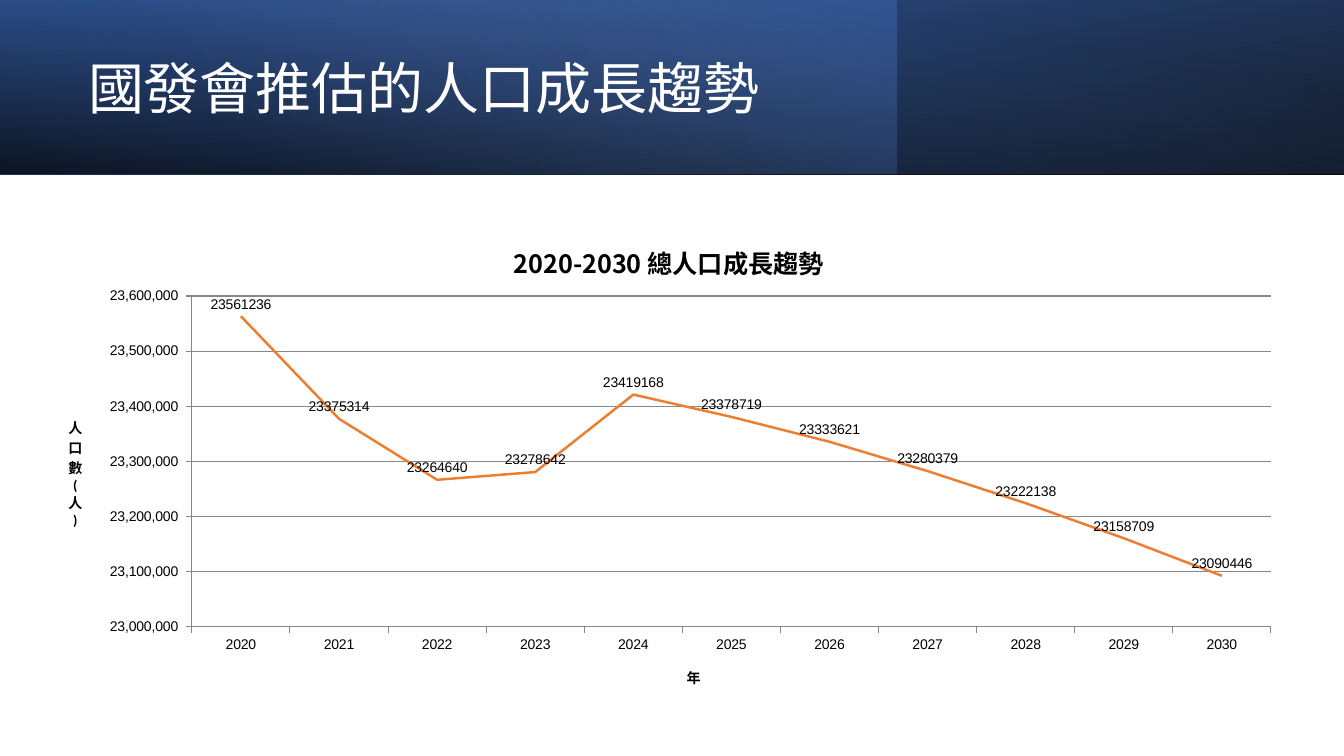
from dataclasses import dataclass

from lxml.etree import SubElement
from pptx import Presentation
from pptx.chart.data import CategoryChartData
from pptx.dml.color import RGBColor
from pptx.enum.chart import XL_CHART_TYPE, XL_LABEL_POSITION, XL_MARKER_STYLE, XL_TICK_MARK
from pptx.enum.shapes import MSO_SHAPE
from pptx.enum.text import MSO_ANCHOR, PP_ALIGN
from pptx.oxml import parse_xml
from pptx.oxml.ns import nsdecls, qn
from pptx.util import Emu, Pt


@dataclass(frozen=True)
class Theme:
    white: str = "FFFFFF"
    black: str = "000000"
    navy: str = "2F5597"
    blue: str = "4472C4"
    sky: str = "8FAADC"
    orange: str = "ED7D31"
    grid: str = "878787"
    heading_font: str = "Calibri"
    label_font: str = "Arial"
    chart_title_font: str = "Noto Sans CJK TC"
    heading_size: int = 40
    chart_title_size: int = 18
    label_size: int = 10


def px(n):
    return Emu(round(n * 914400 / 100.8))


class SlideBuilder:
    def __init__(self, prs, theme):
        self.theme = theme
        self.s = prs.slides.add_slide(prs.slide_layouts[5])

    def font(self, font, size, name, color, bold=False):
        font.size = Pt(size)
        font.name = name
        font.bold = bold
        font.color.rgb = RGBColor.from_string(color)

    def band(self, box, stops, angle, flip=False, rotation=0):
        sp = self.s.shapes.add_shape(MSO_SHAPE.RECTANGLE, *map(px, box))
        sp.shadow.inherit = False
        sp.line.fill.background()
        sp.rotation = rotation
        xfrm = sp._element.spPr.find(qn("a:xfrm"))
        if flip:
            xfrm.set("flipH", "1")
        gs = "".join(
            f'<a:gs pos="{pos * 1000}"><a:srgbClr val="{color}">'
            f'<a:alpha val="{alpha * 1000}"/></a:srgbClr></a:gs>'
            for pos, color, alpha in stops
        )
        geometry = sp._element.spPr.find(qn("a:prstGeom"))
        geometry.addnext(parse_xml(
            f'<a:gradFill {nsdecls("a")} rotWithShape="1"><a:gsLst>{gs}</a:gsLst>'
            f'<a:lin ang="{angle * 60000}" scaled="0"/></a:gradFill>'
        ))

    def title(self, box, text):
        t = self.theme
        sp = self.s.shapes.title
        sp.left, sp.top, sp.width, sp.height = map(px, box)
        self.s.shapes._spTree.append(sp._element)
        tf = sp.text_frame
        tf.text = text
        tf.word_wrap = True
        tf.vertical_anchor = MSO_ANCHOR.MIDDLE
        p = tf.paragraphs[0]
        p.alignment = PP_ALIGN.LEFT
        p.line_spacing = 0.9
        self.font(p.font, t.heading_size, t.heading_font, t.white)

    def place(self, element, **fractions):
        layout = element.find(qn("c:layout"))
        if layout is None:
            layout = parse_xml(f'<c:layout {nsdecls("c")}/>')
            element.insert(0, layout)
        manual = SubElement(layout, qn("c:manualLayout"))
        if "w" in fractions:
            SubElement(manual, qn("c:layoutTarget")).set("val", "inner")
        for key in ("x", "y"):
            SubElement(manual, qn(f"c:{key}Mode")).set("val", "edge")
        for key, value in fractions.items():
            SubElement(manual, qn(f"c:{key}")).set("val", str(value))

    def chart_text(self, owner, text, size, name, x, y):
        title = owner.chart_title if hasattr(owner, "chart_title") else owner.axis_title
        tf = title.text_frame
        tf.text = text
        self.font(tf.paragraphs[0].font, size, name, self.theme.black, bold=True)
        self.place(title._element, x=x, y=y)
        return tf

    def axis(self, axis, text, x, y):
        t = self.theme
        axis.major_tick_mark = XL_TICK_MARK.OUTSIDE
        axis.minor_tick_mark = XL_TICK_MARK.NONE
        axis.format.line.color.rgb = RGBColor.from_string(t.grid)
        axis.format.line.width = Pt(0.75)
        self.font(axis.tick_labels.font, t.label_size, t.label_font, t.black)
        return self.chart_text(axis, text, t.label_size, t.heading_font, x, y)

    def line_chart(self, box, title, categories, series):
        t = self.theme
        data = CategoryChartData()
        data.categories = categories
        for name, values, _ in series:
            data.add_series(name, values)
        chart = self.s.shapes.add_chart(XL_CHART_TYPE.LINE_STACKED, *map(px, box), data).chart
        chart.has_legend = False
        self.font(chart.font, t.label_size, t.heading_font, t.black)
        self.chart_text(chart, title, t.chart_title_size, t.chart_title_font, 0.37, 0.04)
        self.place(chart._chartSpace.chart.plotArea, x=0.116, y=0.161, w=0.864, h=0.674)

        self.axis(chart.category_axis, "年", 0.51, 0.91)
        values_axis = chart.value_axis
        tf = self.axis(values_axis, "人口數(人)", 0.015, 0.4)
        body = tf._txBody.find(qn("a:bodyPr"))
        body.set("rot", "0")
        body.set("vert", "wordArtVert")
        values_axis.minimum_scale = 23000000
        values_axis.maximum_scale = 23600000
        values_axis.major_unit = 100000
        values_axis.tick_labels.number_format = r"#,##0_);[Red]\(#,##0\)"
        values_axis.tick_labels.number_format_is_linked = False
        grid = values_axis.major_gridlines.format.line
        grid.color.rgb = RGBColor.from_string(t.grid)
        grid.width = Pt(0.75)

        plot = chart.plots[0]
        plot.vary_by_categories = False
        for line, (_, _, color) in zip(plot.series, series):
            line.smooth = False
            line.marker.style = XL_MARKER_STYLE.NONE
            line.format.line.color.rgb = RGBColor.from_string(color)
            line.format.line.width = Pt(1.75)
            labels = line.data_labels
            labels.show_value = True
            labels.position = XL_LABEL_POSITION.ABOVE
            self.font(labels.font, t.label_size, t.label_font, t.black)


def main():
    prs = Presentation()
    prs.slide_width, prs.slide_height = px(1344), px(756)
    theme = Theme()
    b = SlideBuilder(prs, theme)

    header = (0, 0, 1344, 174)
    b.band(header, [(0, theme.black, 96), (100, theme.navy, 100)], 100, flip=True, rotation=180)
    b.band((0, 0, 897, 174), [(0, theme.blue, 41), (74, theme.sky, 0)], 140)
    b.band(header, [(0, theme.black, 63), (78, theme.blue, 15)], 260, flip=True)
    b.title((78, 27, 778, 128), "國發會推估的人口成長趨勢")

    years = range(2020, 2031)
    population = (
        23561236, 23375314, 23264640, 23278642, 23419168, 23378719,
        23333621, 23280379, 23222138, 23158709, 23090446,
    )
    b.line_chart(
        (47, 217, 1249, 491),
        "2020-2030 總人口成長趨勢",
        [str(year) for year in years],
        [("Series 1", years, theme.blue), ("Series 2", population, theme.orange)],
    )
    prs.save("out.pptx")


if __name__ == "__main__":
    main()
